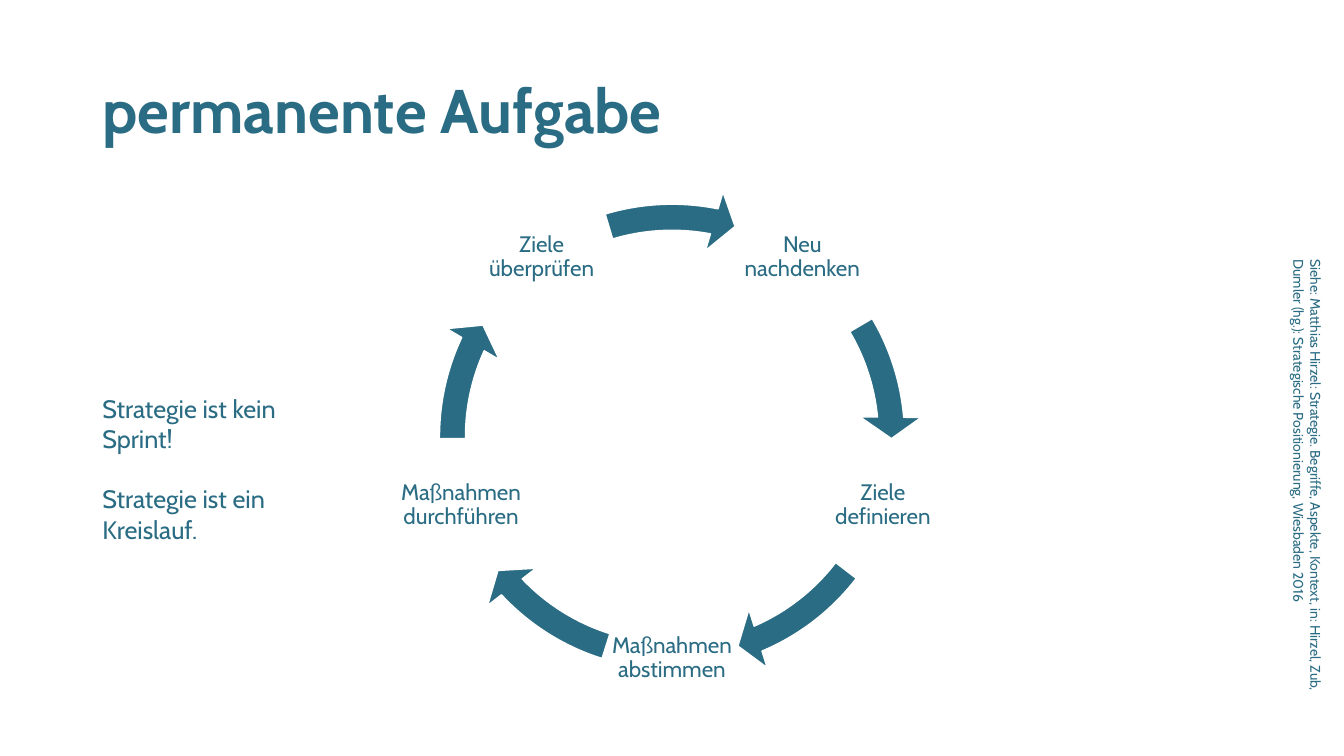
from math import cos, radians, sin

from pptx import Presentation
from pptx.dml.color import RGBColor
from pptx.enum.shapes import MSO_SHAPE
from pptx.enum.text import MSO_ANCHOR, MSO_AUTO_SIZE, PP_ALIGN
from pptx.util import Inches, Pt

CIRCULAR_ARROW = MSO_SHAPE.CIRCULAR_ARROW
MIDDLE, TOP = MSO_ANCHOR.MIDDLE, MSO_ANCHOR.TOP
LEFT, CENTER = PP_ALIGN.LEFT, PP_ALIGN.CENTER
NO_AUTOFIT = MSO_AUTO_SIZE.NONE

FONT = "Cabin"
TEAL = "2A6C83"
WHITE = "FFFFFF"
COLUMNS, ROWS = 40, 22.5
TITLE_ONLY = 5

RING_CENTER = (20, 13)
LABEL_RADIUS = 6.6
LABEL_SIZE = 3.96
RING_SIZE = 14.88
FIRST_LABEL_ANGLE = -54
BAND_THICKNESS, HEAD_WIDTH = 0.052, 0.061
HEAD_ANGLE = 5.6
ADJUSTMENT_PER_DEGREE = 0.6

STEPS = [
    ("Neu nachdenken", 329.44, 354.89),
    ("Ziele definieren", 37.56, 66.91),
    ("Maßnahmen abstimmen", 107.49, 136.84),
    ("Maßnahmen durchführen", 179.51, 204.96),
    ("Ziele überprüfen", 253.31, 281.1),
]


def color(value):
    return RGBColor.from_string(value)


class SlideBuilder:
    """Draws styled elements on one slide, measured in grid columns and rows."""

    def __init__(self, deck):
        self.page = deck.slides.add_slide(deck.slide_layouts[TITLE_ONLY])
        self.column = deck.slide_width / COLUMNS
        self.row = deck.slide_height / ROWS

    def area(self, left, top, width, height):
        return (round(left * self.column), round(top * self.row),
                round(width * self.column), round(height * self.row))

    def square(self, center, size):
        return self.area(center[0] - size / 2, center[1] - size / 2, size, size)

    def fill_text(self, frame, lines, size, bold=False, align=LEFT, anchor=TOP,
                  spacing=1.0, gap=0):
        frame.word_wrap = True
        frame.auto_size = NO_AUTOFIT
        frame.vertical_anchor = anchor
        for index, line in enumerate(lines):
            para = frame.add_paragraph() if index else frame.paragraphs[0]
            para.text = line
            para.alignment = align
            para.line_spacing = spacing
            para.space_before = Pt(gap if index else 0)
            para.font.name = FONT
            para.font.size = Pt(size)
            para.font.bold = bold
            para.font.color.rgb = color(TEAL)

    def title(self, text, area):
        box = self.page.shapes.title
        box.left, box.top, box.width, box.height = self.area(*area)
        self.fill_text(box.text_frame, [text], 44, bold=True, anchor=MIDDLE,
                       spacing=0.9)

    def text(self, lines, area, size, gap=0, rotation=0):
        box = self.page.shapes.add_textbox(*self.area(*area))
        box.rotation = rotation
        self.fill_text(box.text_frame, lines, size, gap=gap)

    def label(self, text, center):
        box = self.page.shapes.add_textbox(*self.square(center, LABEL_SIZE))
        frame = box.text_frame
        frame.margin_left = frame.margin_right = Inches(0.02)
        frame.margin_top = frame.margin_bottom = Inches(0.02)
        self.fill_text(frame, [text], 16, align=CENTER, anchor=MIDDLE, spacing=0.9)

    def arrow(self, start, end):
        shape = self.page.shapes.add_shape(
            CIRCULAR_ARROW, *self.square(RING_CENTER, RING_SIZE))
        shape.shadow.inherit = False
        shape.fill.solid()
        shape.fill.fore_color.rgb = color(TEAL)
        shape.line.color.rgb = color(WHITE)
        shape.line.width = Pt(1)
        angles = [angle * ADJUSTMENT_PER_DEGREE for angle in (HEAD_ANGLE, end, start)]
        for index, value in enumerate([BAND_THICKNESS, *angles, HEAD_WIDTH]):
            shape.adjustments[index] = value

    def cycle(self, steps):
        for index, (name, start, end) in enumerate(steps):
            angle = radians(FIRST_LABEL_ANGLE + index * 360 / len(steps))
            self.label(name, (RING_CENTER[0] + LABEL_RADIUS * cos(angle),
                              RING_CENTER[1] + LABEL_RADIUS * sin(angle)))
            self.arrow(start, end)


def main():
    deck = Presentation()
    deck.slide_width, deck.slide_height = Inches(13.33), Inches(7.5)
    builder = SlideBuilder(deck)
    builder.title("permanente Aufgabe", (2.75, 1.2, 34.5, 4.35))
    builder.cycle(STEPS)
    builder.text(["Strategie ist kein Sprint!", "Strategie ist ein Kreislauf."],
                 (2.75, 11.55, 5.9, 4.85), 18, gap=21.6)
    builder.text(["Siehe: Matthias Hirzel: Strategie. Begriffe, Aspekte, Kontext, in: "
                  "Hirzel, Zub, Dumler (hg.): Strategische Positionierung, "
                  "Wiesbaden 2016"],
                 (31.6, 14.07, 14.6, 1.32), 10, rotation=90)
    deck.save("out.pptx")


if __name__ == "__main__":
    main()
